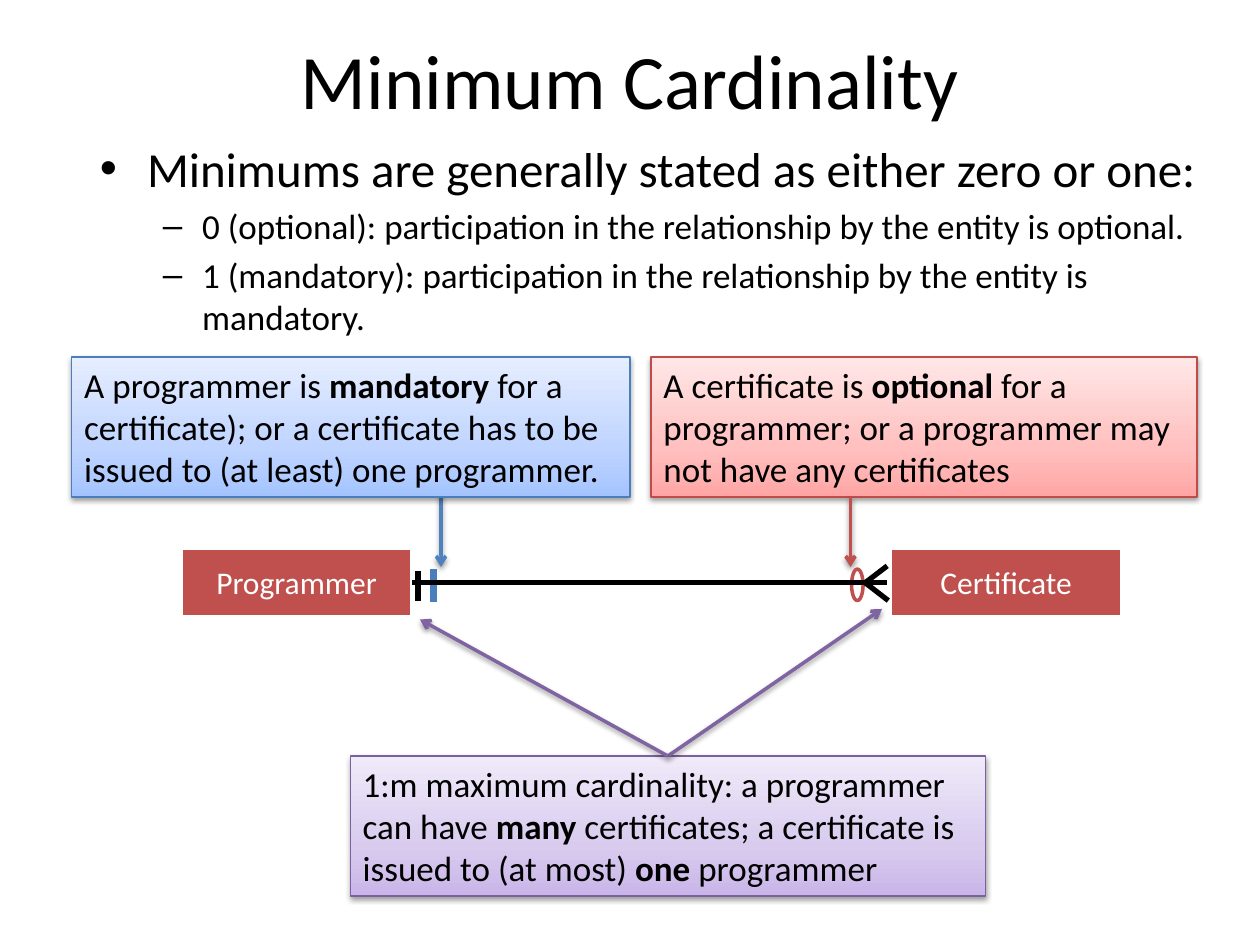
from copy import deepcopy
from dataclasses import dataclass

from lxml import etree
from pptx import Presentation, util as u
from pptx.dml.color import RGBColor
from pptx.enum import shapes, text
from pptx.oxml.ns import qn

COLS, ROWS = 120, 90
CELL = u.Inches(10) / COLS


@dataclass(frozen=True)
class Theme:
    font: str = "Calibri"
    black: str = "000000"
    white: str = "FFFFFF"
    blue: str = "4F81BD"
    blue_edge: str = "4B7EBC"
    blue_fill: tuple = ("A4C4FF", "BFD4FF", "E6EEFF")
    red: str = "C0504D"
    red_edge: str = "BF4C48"
    red_fill: tuple = ("FFA6A5", "FFC0BF", "FFE7E7")
    purple: str = "8064A2"
    purple_edge: str = "7D60A0"
    purple_fill: tuple = ("C9B5E8", "D8CBEE", "F0EAF9")
    title: int = 44
    bullet: int = 28
    note: int = 20
    entity: int = 18


T = Theme()
NOTE_H = 13.33
ENTITY_W, ENTITY_H, ENTITY_Y = 21.83, 6.43, 52.33
LINK_Y = 55.5


def grid(*values):
    return [u.Emu(round(v * CELL)) for v in values]


def rgb(value):
    return RGBColor.from_string(value)


def sub(parent, tag, **attrs):
    return etree.SubElement(parent, qn(tag), {k: str(v) for k, v in attrs.items()})


def write(p, content, size, color=T.black):
    """Fill a paragraph; parts between ** marks are bold."""
    for i, part in enumerate(content.split("**")):
        r = p.add_run()
        r.text = part
        fmt = dict(name=T.font, size=u.Pt(size), bold=i % 2 == 1)
        for key, value in fmt.items():
            setattr(r.font, key, value)
        r.font.color.rgb = rgb(color)


def place(sp, *box):
    for key, value in zip(("left", "top", "width", "height"), grid(*box)):
        setattr(sp, key, value)


def stroke(sp, color, width):
    sp.line.color.rgb = rgb(color)
    sp.line.width = u.Pt(width)


def set_shadow(sp, visible):
    """Give the shape a soft shadow below it, or none at all."""
    sp_pr = sp._element.spPr
    effects = sub(sp_pr, "a:effectLst")
    if visible:
        shadow = sub(effects, "a:outerShdw", blurRad=u.Pt(3.1), dist=u.Pt(1.6),
                     dir=90 * 60000, rotWithShape=0)
        sub(sub(shadow, "a:srgbClr", val=T.black), "a:alpha", val=38000)


def add_title(s, content):
    place(s.shapes.title, 6, 0, 108, 15)
    write(s.shapes.title.text_frame.paragraphs[0], content, T.title)


def add_bullets(s, items):
    body = s.placeholders[1]
    place(body, 8.3, 12.6, 108, 67.4)
    tf = body.text_frame
    for i, (level, content) in enumerate(items):
        p = tf.add_paragraph() if i else tf.paragraphs[0]
        p.level = level
        write(p, content, T.note if level else T.bullet)


def add_note(s, x, y, w, colors, edge, *lines):
    sp = s.shapes.add_shape(shapes.MSO_SHAPE.RECTANGLE, *grid(x, y, w, NOTE_H))
    sp.fill.gradient()
    sp.fill.gradient_angle = 90
    stops = sp._element.spPr.find(qn("a:gradFill")).find(qn("a:gsLst"))
    stops.append(deepcopy(stops[0]))
    for stop, color, position in zip(sp.fill.gradient_stops, colors, (0, 0.35, 1)):
        stop.color.rgb = rgb(color)
        stop.position = position
    stroke(sp, edge, 0.75)
    set_shadow(sp, True)
    tf = sp.text_frame
    fmt = dict(word_wrap=True, vertical_anchor=text.MSO_ANCHOR.TOP,
               auto_size=text.MSO_AUTO_SIZE.SHAPE_TO_FIT_TEXT)
    for key, value in fmt.items():
        setattr(tf, key, value)
    for i, line in enumerate(lines):
        p = tf.add_paragraph() if i else tf.paragraphs[0]
        p.alignment = text.PP_ALIGN.LEFT
        write(p, line, T.note)
    return sp


def add_line(s, start, end, color=T.black, width=3):
    cn = s.shapes.add_connector(shapes.MSO_CONNECTOR.STRAIGHT, *grid(*start, *end))
    stroke(cn, color, width)
    set_shadow(cn, False)
    return cn


def add_arrow(s, start, end, color):
    cn = s.shapes.add_connector(shapes.MSO_CONNECTOR.STRAIGHT, *grid(*start, *end))
    stroke(cn, color, 2)
    sub(cn.line._get_or_add_ln(), "a:tailEnd", type="arrow")
    set_shadow(cn, True)
    return cn


def add_entity(s, x, name):
    """Draw an entity as a one-cell table with white borders."""
    frame = s.shapes.add_table(1, 1, *grid(x, ENTITY_Y, ENTITY_W, ENTITY_H))
    cell = frame.table.cell(0, 0)
    tc_pr = cell._tc.get_or_add_tcPr()
    for side, width in dict(L=1, R=1, T=1, B=3).items():
        ln = sub(tc_pr, f"a:ln{side}", w=u.Pt(width))
        sub(sub(ln, "a:solidFill"), "a:srgbClr", val=T.white)
    cell.fill.solid()
    cell.fill.fore_color.rgb = rgb(T.red)
    cell.vertical_anchor = text.MSO_ANCHOR.MIDDLE
    p = cell.text_frame.paragraphs[0]
    p.alignment = text.PP_ALIGN.CENTER
    write(p, name, T.entity, T.white)


def add_zero_mark(s):
    sp = s.shapes.add_shape(shapes.MSO_SHAPE.OVAL, *grid(81.1, 54.2, 1.1, 3))
    sp.fill.background()
    stroke(sp, T.red, 2)
    sp.shadow.inherit = False


def add_notes_with_arrows(s):
    add_arrow(s, (42, 46), (42, 54), T.blue)
    add_note(s, 62, 34, 52, T.red_fill, T.red_edge,
             "A certificate is **optional** for a programmer; "
             "or a programmer may not have any certificates")
    add_note(s, 6.84, 34, 53.16, T.blue_fill, T.blue_edge,
             "A programmer is **mandatory** for a certificate); or a certificate "
             "has to be issued to (at least) one programmer.")
    add_arrow(s, (81, 34 + NOTE_H), (81, 54), T.red)
    maximum = add_note(s, 33.36, 72, 60.5, T.purple_fill, T.purple_edge,
                       "1:m maximum cardinality: a programmer",
                       "can have **many** certificates; a certificate is "
                       "issued to (at most) **one** programmer")
    for end in ((84, 58), (40, 59)):
        add_arrow(s, (63.6, 72), end, T.purple).begin_connect(maximum, 0)


def add_relationship(s):
    add_zero_mark(s)
    add_line(s, (41.3, 54.2), (41.3, 57.3), T.blue_edge, 4)
    add_entity(s, 17.33, "Programmer")
    add_line(s, (39.25, LINK_Y), (84.5, LINK_Y))
    add_line(s, (39.8, 54.4), (39.8, 57.2))
    add_entity(s, 84.9, "Certificate")
    for foot in ((84.5, 53.9), (84.6, 57.2)):
        add_line(s, foot, (82.4, LINK_Y))


def main():
    prs = Presentation()
    prs.slide_width, prs.slide_height = grid(COLS, ROWS)
    s = prs.slides.add_slide(prs.slide_layouts[1])
    add_title(s, "Minimum Cardinality")
    add_bullets(s, [
        (0, "Minimums are generally stated as either zero or one:"),
        (1, "0 (optional): participation in the relationship by the entity is optional."),
        (1, "1 (mandatory): participation in the relationship by the entity is mandatory."),
    ])
    add_notes_with_arrows(s)
    add_relationship(s)
    prs.save("out.pptx")


if __name__ == "__main__":
    main()
